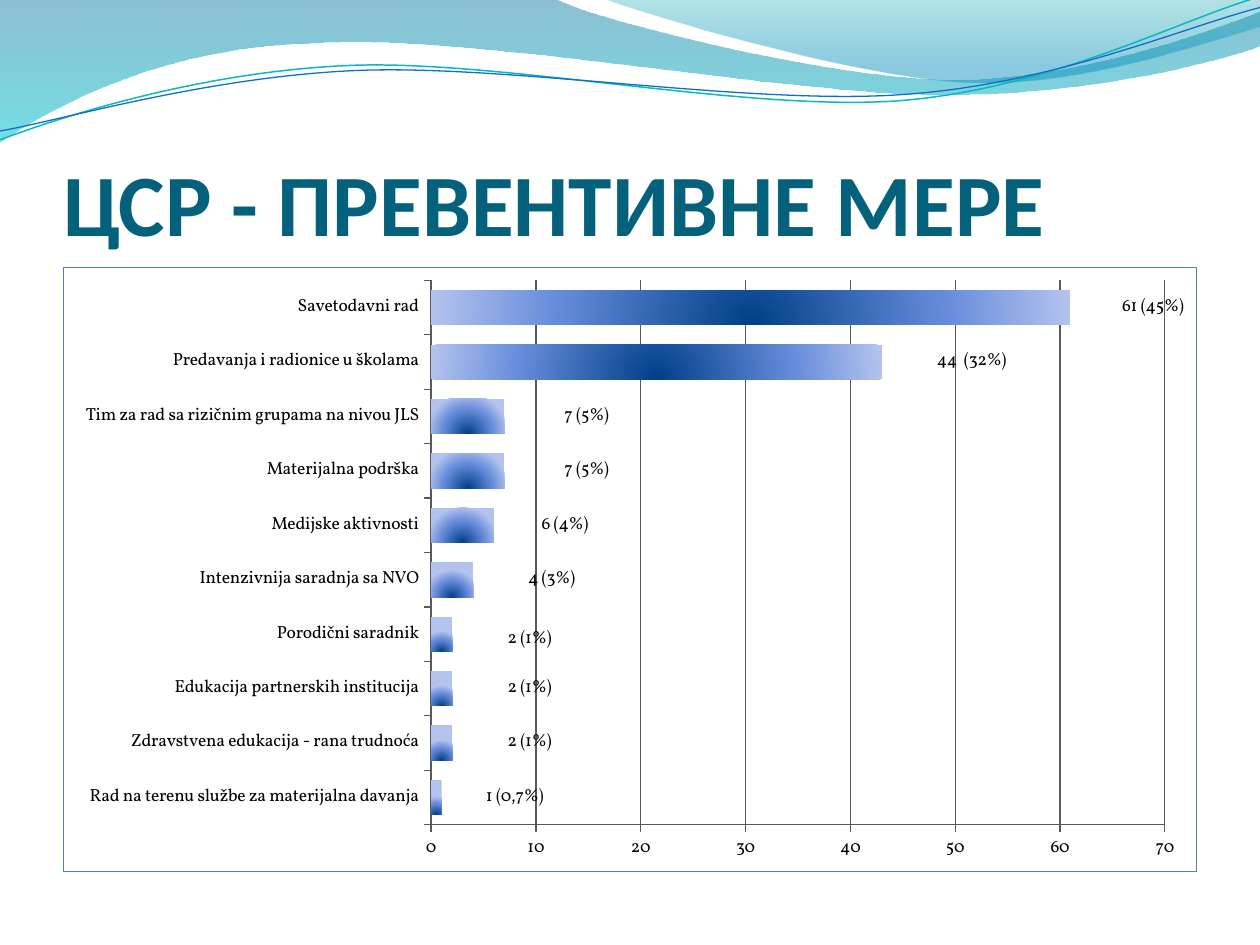
import math
from dataclasses import dataclass
from typing import Optional

from lxml import etree
from pptx import Presentation
from pptx.chart import data as cd
from pptx.dml.color import RGBColor
from pptx.enum import chart as ec, text
from pptx.oxml import parse_xml
from pptx.oxml.ns import nsdecls, qn
from pptx.util import Inches, Pt

CHART_W, CHART_H = 9, 4.8


@dataclass
class Wave:
    """Points are a start, then three per curve; corners close the outline."""
    curves: list
    corners: tuple = ()
    stops: tuple = ()
    line: Optional[str] = None
    width: float = 0.75
    center: tuple = (0, 0)
    rotation: float = 0


@dataclass
class Bar:
    """A bar with its label, and the label's shift in inches."""
    name: str
    value: int
    label: str
    dx: float = 0.85
    dy: float = 0


WAVES = [
    Wave([(4.4, -0.01), (4.76, 0.17), (6.64, 0.63), (7.58, 0.63),
          (8.53, 0.63), (9.58, 0.26), (10, 0.09),
          (10, 0.18), (10.01, 0.27), (10.01, 0.36),
          (9.83, 0.44), (8.7, 0.76), (7.46, 0.75),
          (6.22, 0.75), (3.82, 0.28), (2.57, 0.34),
          (1.29, 0.36), (0.46, 0.83), (-0.01, 1.13)],
         corners=((0, 0),),
         stops=((0, "0074A1", 45), (100, "00C6CF", 55))),
    Wave([(4.79, -0.01), (5.09, 0.11), (6.82, 0.62), (7.69, 0.65),
          (8.56, 0.69), (9.61, 0.32), (10, 0.21)],
         corners=((10, 0),),
         stops=((0, "00A1A9", 30), (80, "008BBF", 45))),
    Wave([(0, 1.11), (0.48, 0.93), (1.58, 0.57), (2.77, 0.52),
          (3.95, 0.47), (5.93, 0.89), (7.13, 0.8),
          (8.33, 0.71), (9.38, 0.15), (9.98, -0.02)],
         line="0AB8BF", width=0.85, center=(4.99, 0.57), rotation=-2.7),
    Wave([(0, 1.04), (0.47, 0.96), (1.64, 0.61), (2.83, 0.56),
          (4.03, 0.51), (5.97, 0.84), (7.17, 0.75),
          (8.36, 0.67), (9.41, 0.21), (10, 0.06)],
         line="0F6FC6", center=(5, 0.59), rotation=-2.7),
]

BARS = [
    Bar("Rad na terenu službe za materijalna davanja", 1, "1 (0,7%)"),
    Bar("Zdravstvena edukacija - rana trudnoća", 2, "2 (1%)", 0.83),
    Bar("Edukacija partnerskih institucija", 2, "2 (1%)", 0.83),
    Bar("Porodični saradnik", 2, "2 (1%)", 0.83, 0.04),
    Bar("Intenzivnija saradnja sa NVO", 4, "4 (3%)"),
    Bar("Medijske aktivnosti", 6, "6 (4%)", 0.79),
    Bar("Materijalna podrška", 7, "7 (5%)", 0.87),
    Bar("Tim za rad sa rizičnim grupama na nivou JLS", 7, "7 (5%)", 0.87),
    Bar("Predavanja i radionice u školama", 43, "44  (32%)", 1.03),
    Bar("Savetodavni rad", 61, "61 (45%)", 0.94),
]
BAR_STOPS = ((0, "003F8A", 100), (60, "648BDA", 100), (100, "B3C3EE", 100))
LINEAR = '<a:lin ang="5400000" scaled="0"/>'
RADIAL = '<a:path path="circle"><a:fillToRect l="50000" t="100000" r="50000"/></a:path>'


def rgb(color: str) -> RGBColor:
    return RGBColor.from_string(color)


def set_all(obj, values: dict) -> None:
    for key, value in values.items():
        setattr(obj, key, value)


def set_gradient(fill, props, stops: tuple, shade: str) -> None:
    fill.solid()
    gs = "".join(
        f'<a:gs pos="{pos * 1000}"><a:srgbClr val="{color}">'
        f'<a:alpha val="{alpha * 1000}"/></a:srgbClr></a:gs>'
        for pos, color, alpha in stops)
    props.replace(props.find(qn("a:solidFill")), parse_xml(
        f'<a:gradFill {nsdecls("a")} rotWithShape="1">'
        f'<a:gsLst>{gs}</a:gsLst>{shade}</a:gradFill>'))


def manual_layout(inner: bool = False, **inches: float):
    """Chart layout from inches; inner places the plot itself."""
    modes = {"layoutTarget": "inner", "xMode": "edge", "yMode": "edge"} if inner else {}
    shares = {k: v / (CHART_W if k in "xw" else CHART_H) for k, v in inches.items()}
    layout = parse_xml(f'<c:layout {nsdecls("c")}><c:manualLayout/></c:layout>')
    for key, value in {**modes, **shares}.items():
        etree.SubElement(layout[0], qn(f"c:{key}")).set("val", str(value))
    return layout


def unrotate(point: tuple, wave: Wave) -> tuple:
    """Where the point lies, in EMU, before the wave is turned about its center."""
    angle = math.radians(-wave.rotation)
    cx, cy = wave.center
    x, y = point[0] - cx, point[1] - cy
    return (Inches(cx + x * math.cos(angle) - y * math.sin(angle)),
            Inches(cy + x * math.sin(angle) + y * math.cos(angle)))


def draw_wave(slide, wave: Wave) -> None:
    pts = [unrotate(p, wave) for p in wave.curves]
    ends = pts[::3] + [unrotate(p, wave) for p in wave.corners]
    builder = slide.shapes.build_freeform(*ends[0])
    builder.add_line_segments(ends[1:], close=bool(wave.stops))
    sp = builder.convert_to_shape()
    segments = list(sp._element.spPr.iter(qn("a:lnTo")))
    for i, segment in zip(range(1, len(pts), 3), segments):
        curve = etree.Element(qn("a:cubicBezTo"))
        for x, y in pts[i:i + 3]:
            pt = etree.SubElement(curve, qn("a:pt"))
            pt.set("x", str(x - sp.left))
            pt.set("y", str(y - sp.top))
        segment.getparent().replace(segment, curve)
    sp.rotation = wave.rotation
    sp.shadow.inherit = False
    if wave.stops:
        set_gradient(sp.fill, sp._element.spPr, wave.stops, LINEAR)
    else:
        sp.fill.background()
    if wave.line:
        format_line(sp.line, wave.line, wave.width)
    else:
        sp.line.fill.background()


def draw_title(slide, title: str) -> None:
    sp = slide.shapes.title
    set_all(sp, dict(left=Inches(0.5), top=Inches(0.77), width=Inches(9), height=Inches(1.25)))
    tf = sp.text_frame
    set_all(tf, dict(margin_left=0, margin_right=0, margin_top=Inches(0.05), margin_bottom=0,
                     vertical_anchor=text.MSO_ANCHOR.BOTTOM, word_wrap=True))
    p = tf.paragraphs[0]
    p.alignment = text.PP_ALIGN.LEFT
    r = p.add_run()
    r.text = title
    set_all(r.font, dict(size=Pt(50), bold=True, name="Calibri"))
    r.font.color.rgb = rgb("04617B")


def format_text(font) -> None:
    set_all(font, dict(size=Pt(10), name="Vollkorn", bold=False))
    font.color.rgb = rgb("000000")


def format_line(line, color: str = "595959", width: float = 0.75) -> None:
    line.color.rgb = rgb(color)
    line.width = Pt(width)


def hide_leader_lines(labels) -> None:
    for old in labels.findall(qn("c:showLeaderLines")):
        labels.remove(old)
    labels.append(parse_xml(f'<c:showLeaderLines {nsdecls("c")} val="0"/>'))
    labels.append(parse_xml(
        f'<c:extLst {nsdecls("c")}><c:ext uri="{{CE6537A1-D6FC-4f65-9D91-7224C49458BB}}" '
        'xmlns:c15="http://schemas.microsoft.com/office/drawing/2012/chart">'
        '<c15:showLeaderLines val="0"/></c:ext></c:extLst>'))


def draw_chart(slide) -> None:
    data = cd.CategoryChartData()
    data.categories = [bar.name for bar in BARS]
    data.add_series("Series 1", [bar.value for bar in BARS])
    chart = slide.shapes.add_chart(ec.XL_CHART_TYPE.BAR_STACKED, Inches(0.5), Inches(2.12),
                                   Inches(CHART_W), Inches(CHART_H), data).chart
    set_all(chart, dict(has_legend=False, has_title=False))
    format_text(chart.font)
    space = chart._chartSpace
    space.find(qn("c:txPr")).addprevious(parse_xml(
        f'<c:spPr {nsdecls("c", "a")}><a:noFill/><a:ln w="9525"><a:solidFill>'
        '<a:srgbClr val="4F81BD"/></a:solidFill></a:ln></c:spPr>'))
    area = space.chart.plotArea
    for old in area.findall(qn("c:layout")):
        area.remove(old)
    area.insert(0, manual_layout(inner=True, x=2.92, y=0.1, w=5.83, h=4.33))

    for axis in (chart.category_axis, chart.value_axis):
        set_all(axis, dict(major_tick_mark=ec.XL_TICK_MARK.OUTSIDE,
                           minor_tick_mark=ec.XL_TICK_MARK.NONE))
        format_line(axis.format.line)
        format_text(axis.tick_labels.font)
    chart.category_axis.has_major_gridlines = False
    set_all(chart.value_axis, dict(minimum_scale=0, maximum_scale=70, major_unit=10,
                                   has_major_gridlines=True))
    format_line(chart.value_axis.major_gridlines.format.line)

    plot = chart.plots[0]
    set_all(plot, dict(gap_width=56, overlap=100, vary_by_categories=False))
    series = plot.series[0]
    fill = series.format.fill
    set_gradient(fill, series._element.find(qn("c:spPr")), BAR_STOPS, RADIAL)
    inside = ec.XL_LABEL_POSITION.INSIDE_END
    set_all(series.data_labels, dict(show_value=True, position=inside))
    for i, bar in enumerate(BARS):
        label = series.points[i].data_label
        r = label.text_frame.paragraphs[0].add_run()
        r.text = bar.label
        format_text(r.font)
        label.position = inside
        label._dLbl.insert(1, manual_layout(x=bar.dx, y=bar.dy))
    hide_leader_lines(series._element.find(qn("c:dLbls")))


def main() -> None:
    prs = Presentation()
    set_all(prs, dict(slide_width=Inches(10), slide_height=Inches(7.5)))
    slide = prs.slides.add_slide(prs.slide_layouts[5])
    for wave in WAVES:
        draw_wave(slide, wave)
    draw_title(slide, "ЦСР - ПРЕВЕНТИВНЕ МЕРЕ")
    draw_chart(slide)
    prs.save("out.pptx")


if __name__ == "__main__":
    main()
